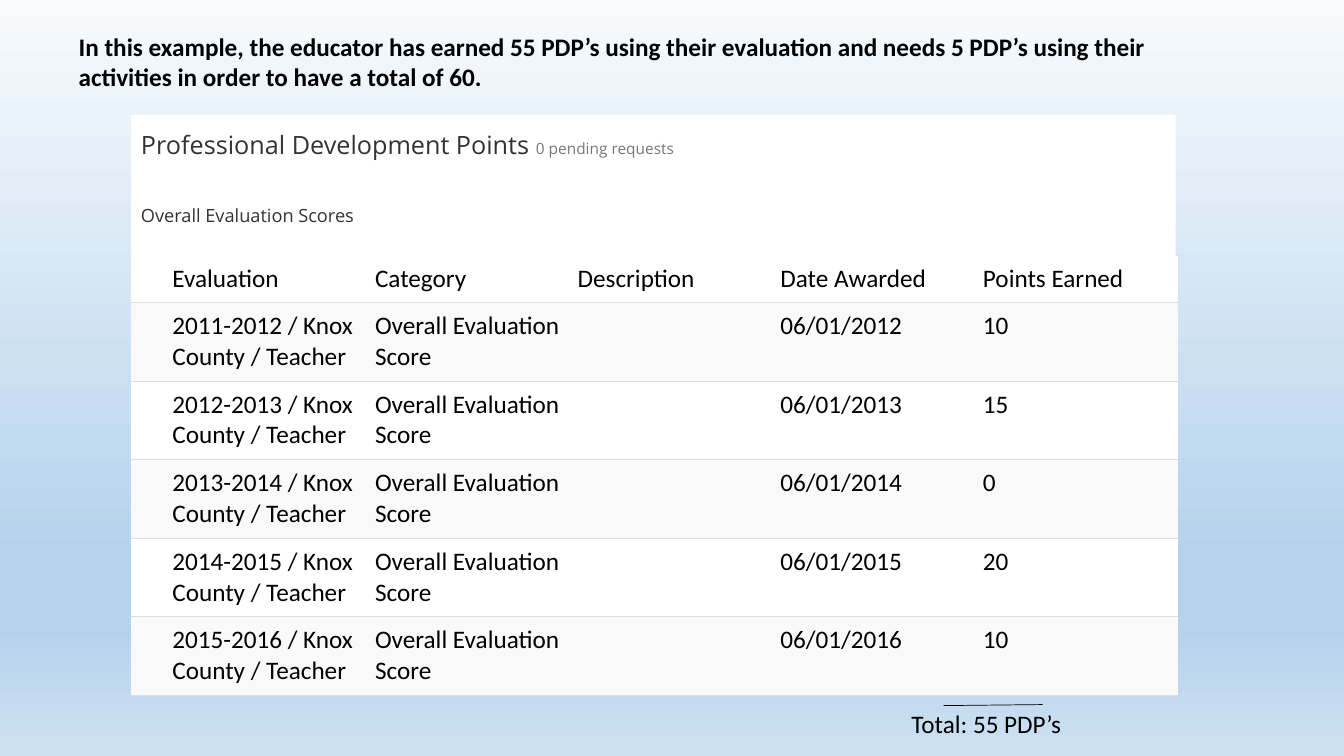
from dataclasses import dataclass

from lxml.etree import SubElement
from pptx import Presentation
from pptx.dml.color import RGBColor
from pptx.enum.shapes import MSO_CONNECTOR, MSO_SHAPE
from pptx.enum.text import MSO_ANCHOR, PP_ALIGN
from pptx.oxml import parse_xml
from pptx.oxml.ns import nsdecls, qn
from pptx.util import Inches, Pt


@dataclass(frozen=True)
class Theme:
    body_font: str = "Calibri"
    panel_font: str = "Open Sans"
    black: str = "000000"
    dark: str = "333333"
    muted: str = "777777"
    white: str = "FFFFFF"
    band: str = "F9F9F9"
    rule: str = "DDDDDD"
    body_size: float = 18
    section_size: float = 13
    note_size: float = 11
    sky: tuple = ((0, "F7FAFD"), (74, "B5D2EC"), (83, "B5D2EC"), (100, "CEE1F2"))


THEME = Theme()
NO_GRID_STYLE = "{2D5ABB26-0587-4C30-8999-92F81FD0307C}"
PANEL_LEFT, PANEL_WIDTH = 1.3, 10.36

HEADERS = ["", "Evaluation", "Category", "Description", "Date Awarded", "Points Earned"]
FIRST_YEAR = 2011
POINTS = [10, 15, 0, 20, 10]


def style_font(font, size, color, name=THEME.body_font, bold=False):
    font.name, font.size, font.bold = name, Pt(size), bold
    font.color.rgb = RGBColor.from_string(color)


def set_insets(target, x, y):
    target.margin_left = target.margin_right = Inches(x)
    target.margin_top = target.margin_bottom = Inches(y)


def set_background(s):
    fill = s.background.fill
    fill.gradient()
    fill.gradient_angle = 270
    stops = s._element.find(".//" + qn("a:gsLst"))
    for stop in list(stops):
        stops.remove(stop)
    for position, color in THEME.sky:
        stop = SubElement(stops, qn("a:gs"), pos=str(position * 1000))
        SubElement(stop, qn("a:srgbClr"), val=color)


def add_title(s, text):
    sp = s.shapes.title
    sp.left, sp.top = Inches(0.68), Inches(0.26)
    sp.width, sp.height = Inches(10.91), Inches(0.71)
    tf = sp.text_frame
    tf.text = text
    tf.word_wrap = True
    tf.vertical_anchor = MSO_ANCHOR.TOP
    set_insets(tf, 0.1, 0.05)
    p = tf.paragraphs[0]
    p.alignment = PP_ALIGN.LEFT
    p.line_spacing = 1.0
    style_font(p.font, THEME.body_size, THEME.black, bold=True)


def add_panel(s, top, height, inset, runs):
    """White heading strip; runs holds (text, size, color)."""
    sp = s.shapes.add_shape(MSO_SHAPE.RECTANGLE, Inches(PANEL_LEFT), Inches(top),
                            Inches(PANEL_WIDTH), Inches(height))
    sp.shadow.inherit = False
    sp.fill.solid()
    sp.fill.fore_color.rgb = RGBColor.from_string(THEME.white)
    sp.line.fill.background()
    tf = sp.text_frame
    tf.word_wrap = True
    tf.vertical_anchor = MSO_ANCHOR.TOP
    set_insets(tf, 0.1, inset)
    p = tf.paragraphs[0]
    p.alignment = PP_ALIGN.LEFT
    for text, size, color in runs:
        r = p.add_run()
        r.text = text
        style_font(r.font, size, color, THEME.panel_font)


def format_cell(cell, text, fill, anchor):
    cell.text = text
    cell.vertical_anchor = anchor
    set_insets(cell, 0.08, 0.08)
    style_font(cell.text_frame.paragraphs[0].font, THEME.body_size, THEME.black)
    cell.fill.solid()
    cell.fill.fore_color.rgb = RGBColor.from_string(fill)
    # Horizontal rules come before the fill in the cell properties
    for index, side in enumerate(("lnT", "lnB")):
        cell._tc.tcPr.insert(index, parse_xml(
            f'<a:{side} {nsdecls("a")} w="9525"><a:solidFill>'
            f'<a:srgbClr val="{THEME.rule}"/></a:solidFill></a:{side}>'))


def add_scores_table(s):
    rows = [HEADERS]
    for year, points in enumerate(POINTS, FIRST_YEAR):
        rows.append(["", f"{year}-{year + 1} / Knox County / Teacher",
                     "Overall Evaluation Score", "", f"06/01/{year + 1}", str(points)])
    table = s.shapes.add_table(len(rows), len(HEADERS), Inches(PANEL_LEFT), Inches(2.53),
                               Inches(PANEL_WIDTH), Inches(4.36)).table
    table.first_row = table.horz_banding = False
    table._tbl.tblPr.find(qn("a:tableStyleId")).text = NO_GRID_STYLE
    for index, column in enumerate(table.columns):
        column.width = Inches(2.01 if index else 0.33)
    for i, values in enumerate(rows):
        table.rows[i].height = Inches(0.78 if i else 0.47)
        fill = THEME.band if i % 2 else THEME.white
        anchor = MSO_ANCHOR.TOP if i else MSO_ANCHOR.BOTTOM
        for j, value in enumerate(values):
            format_cell(table.cell(i, j), value, fill, anchor)


def add_total(s):
    # Sum line
    line = s.shapes.add_connector(MSO_CONNECTOR.STRAIGHT, Inches(9.36), Inches(7),
                                  Inches(10.34), Inches(6.99))
    line.line.color.rgb = RGBColor.from_string(THEME.black)
    line.line.width = Pt(0.5)
    SubElement(line._element.spPr, qn("a:effectLst"))
    # Total below it
    sp = s.shapes.add_textbox(Inches(8.94), Inches(6.98), Inches(1.81), Inches(0.4))
    tf = sp.text_frame
    tf.word_wrap = True
    tf.text = f"Total: {sum(POINTS)} PDP’s"
    style_font(tf.paragraphs[0].font, THEME.body_size, THEME.black)


def main():
    prs = Presentation()
    prs.slide_width, prs.slide_height = Inches(13.33), Inches(7.5)
    s = prs.slides.add_slide(prs.slide_layouts[5])
    set_background(s)
    add_title(s, "In this example, the educator has earned 55 PDP’s using their evaluation "
                 "and needs 5 PDP’s using their activities in order to have a total of 60.")
    add_scores_table(s)
    add_panel(s, 1.14, 0.89, 0.14, [
        ("Professional Development Points ", THEME.body_size, THEME.dark),
        ("0 pending requests", THEME.note_size, THEME.muted)])
    add_panel(s, 1.96, 0.66, 0.07, [
        ("Overall Evaluation Scores", THEME.section_size, THEME.dark)])
    add_total(s)
    prs.save("out.pptx")


if __name__ == "__main__":
    main()
